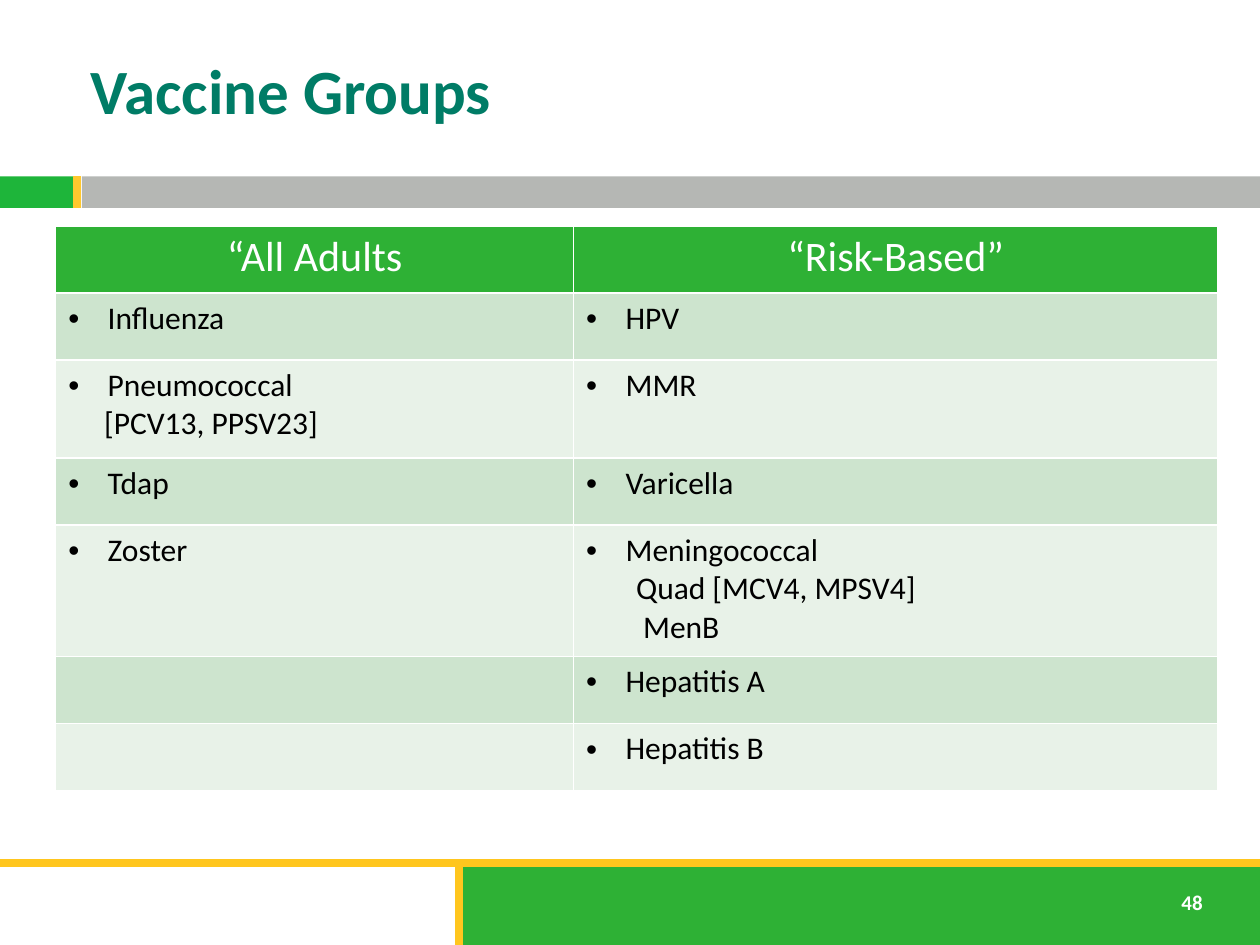
from lxml.etree import SubElement
from pptx import Presentation
from pptx.dml.color import RGBColor
from pptx.enum.shapes import MSO_CONNECTOR, MSO_SHAPE
from pptx.enum.text import MSO_ANCHOR, PP_ALIGN
from pptx.oxml.ns import qn
from pptx.util import Pt

FONT = "Calibri"
COLORS = {
    "white": "FFFFFF", "black": "000000", "teal": "007C66",
    "green": "2EB135", "bright_green": "1EB53A", "gray": "B5B7B4",
    "gold": "FFC61E", "light_gold": "FFC82E",
    "dark_band": "CDE4CE", "light_band": "E8F2E8",
}

# Content: a cell is a list of (text, indent); no indent means a bullet
TITLE = "Vaccine Groups"
PAGE_NUMBER = "48"
HEADERS = ["“All Adults", "“Risk-Based”"]
ROWS = [
    ([("Influenza", None)], [("HPV", None)]),
    ([("Pneumococcal", None), ("[PCV13, PPSV23]", 20.5)], [("MMR", None)]),
    ([("Tdap", None)], [("Varicella", None)]),
    ([("Zoster", None)],
     [("Meningococcal", None), ("Quad [MCV4, MPSV4]", 28.5), ("MenB", 32.5)]),
    ([], [("Hepatitis A", None)]),
    ([], [("Hepatitis B", None)]),
]

# Layout in points
COLUMN_WIDTHS = [296, 368]
ROW_HEIGHTS = {1: 38.4, 2: 56, 3: 75}  # by number of text lines
BULLET_INDENT = 22.5
BARS = [  # left, top, width, height, color
    (0, 100.8, 41.8, 18, "bright_green"),
    (46.8, 100.8, 673.2, 18, "gray"),
    (260.6, 492.5, 459.4, 47.5, "green"),
]
RULES = [  # start x, start y, end x, end y, color
    (0, 493, 720, 493, "gold"),
    (262.1, 494, 262.1, 540, "gold"),
    (44.2, 100.8, 44.2, 118.8, "light_gold"),
]


def color(name):
    return RGBColor.from_string(COLORS[name])


def format_font(paragraph, size, color_name, bold=False):
    font = paragraph.font
    font.name, font.size, font.bold = FONT, Pt(size), bold
    font.color.rgb = color(color_name)


def set_indent(paragraph, left, hanging=0):
    properties = paragraph._p.get_or_add_pPr()
    properties.set("marL", str(Pt(left)))
    properties.set("indent", str(-Pt(hanging)))
    return properties


def fill_cell(cell, lines):
    frame = cell.text_frame
    for index, (text, indent) in enumerate(lines):
        paragraph = frame.add_paragraph() if index else frame.paragraphs[0]
        paragraph.text = text
        if indent is None:
            properties = set_indent(paragraph, BULLET_INDENT, BULLET_INDENT)
            SubElement(properties, qn("a:buFont"), typeface="Arial")
            SubElement(properties, qn("a:buChar"), char="•")
        else:
            set_indent(paragraph, indent)
        format_font(paragraph, 18, "black")


presentation = Presentation()
presentation.slide_width, presentation.slide_height = Pt(720), Pt(540)
slide = presentation.slides.add_slide(presentation.slide_layouts[5])

# Bars and rules
for left, top, width, height, name in BARS:
    shape = slide.shapes.add_shape(
        MSO_SHAPE.RECTANGLE, Pt(left), Pt(top), Pt(width), Pt(height))
    shape.shadow.inherit = False
    shape.fill.solid()
    shape.fill.fore_color.rgb = color(name)
    shape.line.fill.background()
for *ends, name in RULES:
    rule = slide.shapes.add_connector(MSO_CONNECTOR.STRAIGHT, *map(Pt, ends))
    rule.line.color.rgb = color(name)
    rule.line.width = Pt(4.5)
    SubElement(rule._element.spPr, qn("a:effectLst"))

# Title
title = slide.shapes.title
title.left, title.top, title.width, title.height = map(Pt, (44.6, 15.1, 501, 72))
title.text_frame.text = TITLE
title.text_frame.vertical_anchor = MSO_ANCHOR.MIDDLE
title.text_frame.paragraphs[0].alignment = PP_ALIGN.LEFT
format_font(title.text_frame.paragraphs[0], 36, "teal", bold=True)

# Page number
number_box = slide.shapes.add_textbox(Pt(668), Pt(505), Pt(29), Pt(21.6))
number_box.text_frame.word_wrap = False
number_box.text_frame.text = PAGE_NUMBER
format_font(number_box.text_frame.paragraphs[0], 12, "white", bold=True)

# Vaccine table
heights = [ROW_HEIGHTS[1]] + [ROW_HEIGHTS[max(map(len, row))] for row in ROWS]
table = slide.shapes.add_table(
    len(heights), len(HEADERS), Pt(31.8), Pt(129),
    Pt(sum(COLUMN_WIDTHS)), Pt(sum(heights))).table
for column, width in zip(table.columns, COLUMN_WIDTHS):
    column.width = Pt(width)
for row, height in zip(table.rows, heights):
    row.height = Pt(height)

for column_index, header in enumerate(HEADERS):
    cell = table.cell(0, column_index)
    cell.fill.solid()
    cell.fill.fore_color.rgb = color("green")
    cell.text = header
    paragraph = cell.text_frame.paragraphs[0]
    paragraph.alignment = PP_ALIGN.CENTER
    format_font(paragraph, 24, "white")

for row_index, row in enumerate(ROWS, start=1):
    for column_index, lines in enumerate(row):
        cell = table.cell(row_index, column_index)
        cell.fill.solid()
        cell.fill.fore_color.rgb = color("dark_band" if row_index % 2 else "light_band")
        fill_cell(cell, lines)

presentation.save("out.pptx")
